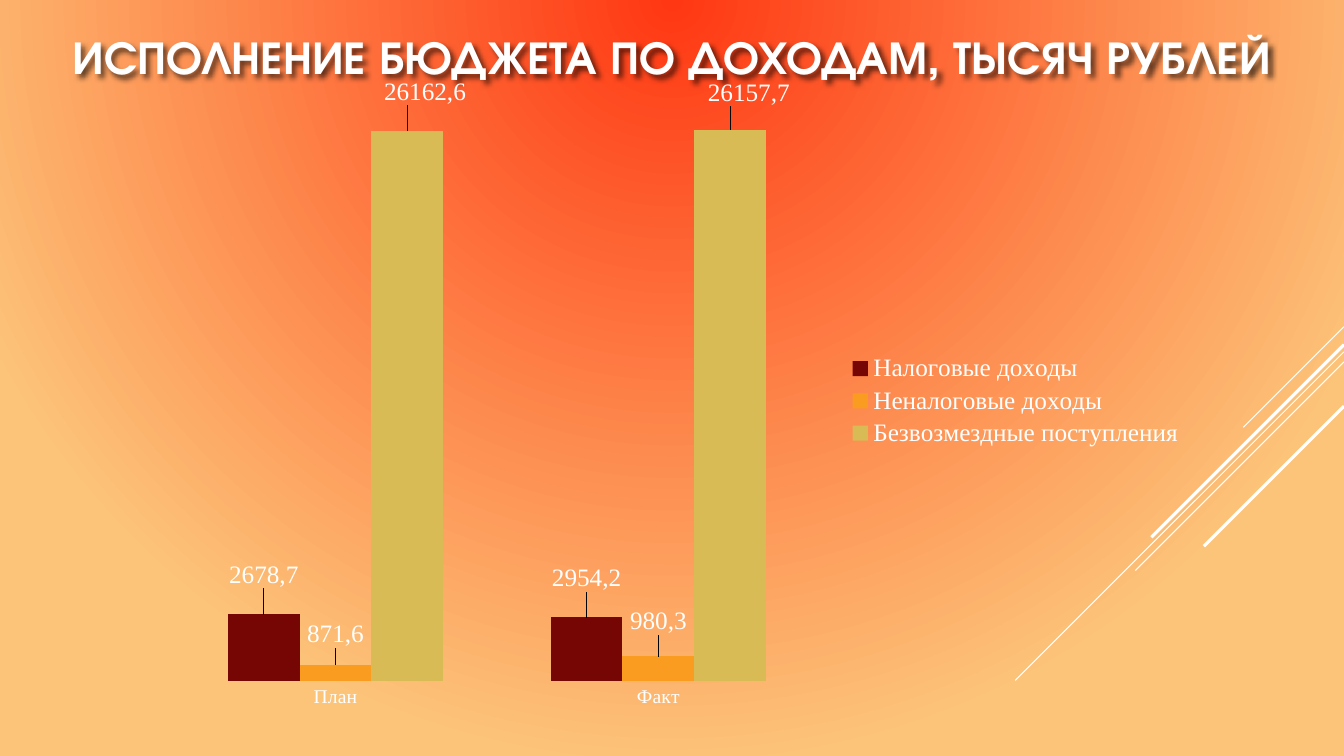
from lxml import etree
from pptx import Presentation
from pptx.chart.data import CategoryChartData
from pptx.dml.color import RGBColor
from pptx.enum.chart import XL_CHART_TYPE, XL_LABEL_POSITION, XL_LEGEND_POSITION, XL_TICK_MARK
from pptx.enum.text import MSO_ANCHOR, PP_ALIGN
from pptx.oxml import parse_xml
from pptx.oxml.ns import nsdecls, qn
from pptx.util import Inches, Pt

COLUMNS = XL_CHART_TYPE.COLUMN_CLUSTERED
OUTSIDE = XL_LABEL_POSITION.OUTSIDE_END
RIGHT = XL_LEGEND_POSITION.RIGHT
NO_TICK = XL_TICK_MARK.NONE
MIDDLE = MSO_ANCHOR.MIDDLE
CENTER = PP_ALIGN.CENTER

THEME = {
    "text": "FFFFFF", "glow": "FF3712", "edge": "FCC479",
    "title_font": "TeX Gyre Adventor", "chart_font": "Times New Roman",
    "title": 33.3, "label": 18, "category": 14, "base": 10,
}
SERIES = [
    ("Налоговые доходы", "760603", (2858.68, 2738.03),
     (("2678,7", 0, -0.034), ("2954,2", 0, -0.033))),
    ("Неналоговые доходы", "FA9C1F", (706.3, 1072.9),
     (("871,6", 0, -0.02), ("980,3", 0, -0.027))),
    ("Безвозмездные поступления", "D9BB55", (23464.2, 23511.64),
     (("26162,6", 0.017, -0.033), ("26157,7", 0.018, -0.03))),
]
RAYS = [(3.24, 1, 0.75), (3.49, 3.26, 0.75), (3.59, 2.07, 0.75),
        (3.42, 1.91, 2.25), (4.03, 1.39, 2.25)]


def style(font, size, name=THEME["chart_font"]):
    font.size = Pt(size)
    font.name = name
    font.color.rgb = RGBColor.from_string(THEME["text"])


def layout(x, y, extra=""):
    return parse_xml(
        f'<c:layout {nsdecls("c")}><c:manualLayout>{extra}'
        f'<c:x val="{x}"/><c:y val="{y}"/></c:manualLayout></c:layout>')


prs = Presentation()
prs.slide_width, prs.slide_height = Inches(13.33), Inches(7.5)
W = prs.slide_width
s = prs.slides.add_slide(prs.slide_layouts[6])

fill = s.background.fill
fill.gradient()
for stop, color in zip(fill.gradient_stops, (THEME["glow"], THEME["edge"])):
    stop.color.rgb = RGBColor.from_string(color)
grad = s.background._cSld.find(".//" + qn("a:gradFill"))
grad.replace(grad.find(qn("a:lin")), parse_xml(
    f'<a:path {nsdecls("a")} path="circle">'
    '<a:fillToRect l="0" t="0" r="0" b="100000"/></a:path>'))

for top, length, weight in RAYS:
    ray = s.shapes.add_connector(1, W, Inches(top), W - Inches(length), Inches(top + length))
    ray.line.color.rgb = RGBColor.from_string(THEME["text"])
    ray.line.width = Pt(weight)
    etree.SubElement(ray._element.spPr, qn("a:effectLst"))

title = s.shapes.add_textbox(0, Inches(0.1), W, Inches(0.91))
title._element.spPr.append(parse_xml(
    f'<a:effectLst {nsdecls("a")}><a:outerShdw blurRad="50800" dist="38100" dir="2700000">'
    '<a:srgbClr val="000000"><a:alpha val="60000"/></a:srgbClr></a:outerShdw></a:effectLst>'))
tf = title.text_frame
tf.word_wrap = True
tf.vertical_anchor = MIDDLE
p = tf.paragraphs[0]
p.text = "ИСПОЛНЕНИЕ БЮДЖЕТА ПО ДОХОДАМ, ТЫСЯЧ РУБЛЕЙ"
p.alignment = CENTER
style(p.font, THEME["title"], THEME["title_font"])
p.font.bold = True

data = CategoryChartData(number_format="#,##0.00")
data.categories = ["План", "Факт"]
for name, color, values, labels in SERIES:
    data.add_series(name, values)
chart = s.shapes.add_chart(
    COLUMNS, Inches(1.52), Inches(0.78), Inches(10.33), Inches(6.36), data).chart
style(chart.font, THEME["base"], THEME["title_font"])
chart.has_title = False
chart.has_legend = True
chart.legend.position = RIGHT
chart.legend.include_in_layout = False
style(chart.legend.font, THEME["label"])

value_axis = chart.value_axis
value_axis.visible = False
value_axis.has_major_gridlines = False
value_axis.minimum_scale, value_axis.maximum_scale = 0, 25000
category_axis = chart.category_axis
category_axis.major_tick_mark = NO_TICK
category_axis.format.line.fill.background()
style(category_axis.tick_labels.font, THEME["category"])

plot = chart.plots[0]
plot.gap_width, plot.overlap = 150, 0
plot.vary_by_categories = False
for series, (name, color, values, labels) in zip(plot.series, SERIES):
    series.format.fill.solid()
    series.format.fill.fore_color.rgb = RGBColor.from_string(color)
    series.data_labels.show_value = True
    series.data_labels.number_format = "#,##0.00"
    series.data_labels.number_format_is_linked = False
    series.data_labels.position = OUTSIDE
    style(series.data_labels.font, THEME["label"])
    for i, (text, dx, dy) in enumerate(labels):
        label = series.points[i].data_label
        p = label.text_frame.paragraphs[0]
        r = p.add_run()
        r.text = text
        style(r.font, THEME["label"])
        label.position = OUTSIDE
    for node, (text, dx, dy) in zip(series._element.findall(".//" + qn("c:dLbl")), labels):
        node.insert(1, layout(dx, dy))

area = chart._chartSpace.find(".//" + qn("c:plotArea"))
for old in area.findall(qn("c:layout")):
    area.remove(old)
frame = layout(0.02, 0.02, '<c:layoutTarget val="inner"/><c:xMode val="edge"/><c:yMode val="edge"/>')
for tag, share in (("c:w", 0.62), ("c:h", 0.92)):
    etree.SubElement(frame[0], qn(tag), val=str(share))
area.insert(0, frame)

prs.save("out.pptx")
